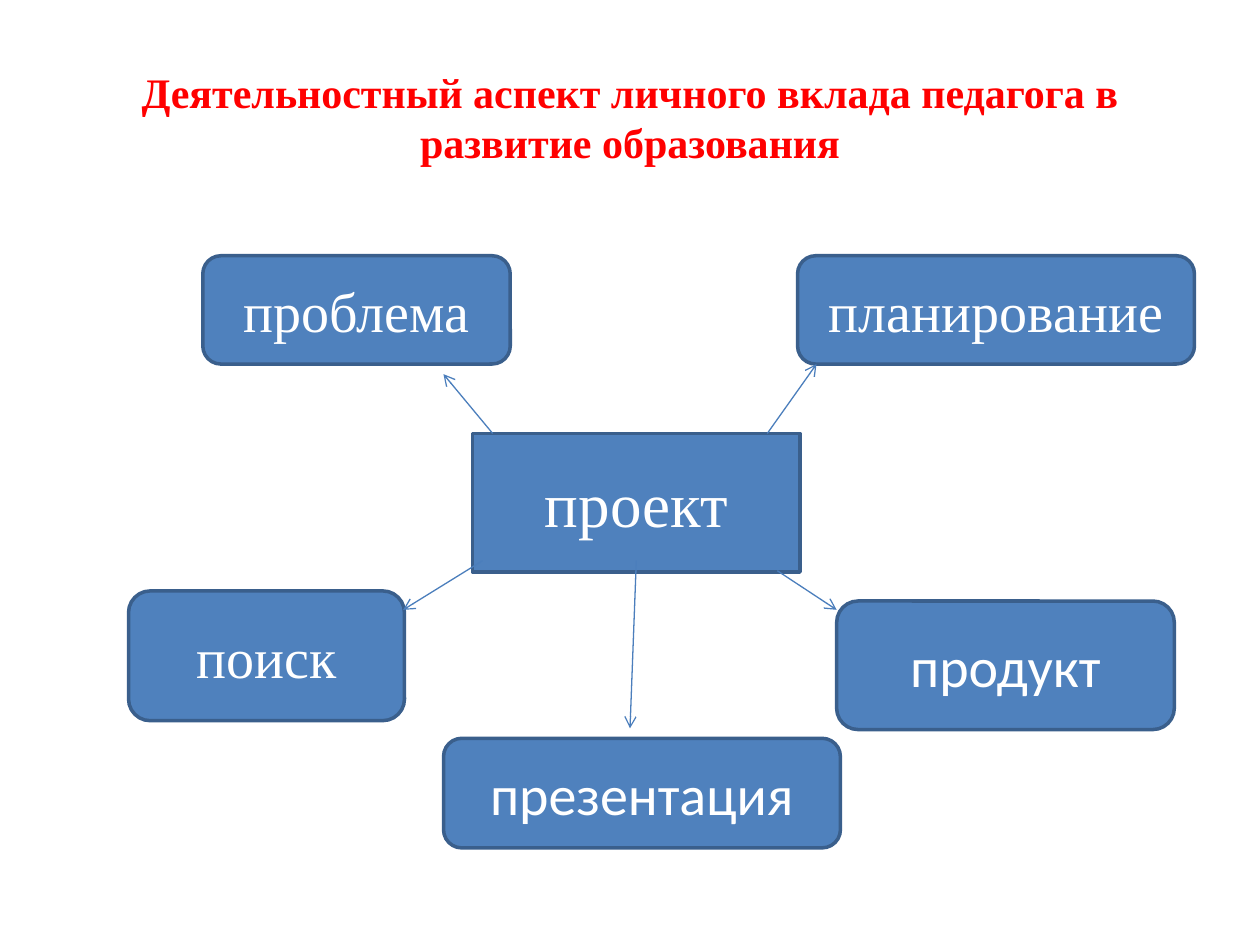
import pptx
import pptx.util
import pptx.dml.color
import pptx.enum.shapes
import pptx.enum.text
import pptx.oxml.ns
import lxml.etree

Inches = pptx.util.Inches
Pt = pptx.util.Pt
Kind = pptx.enum.shapes.MSO_SHAPE
SERIF = "Times New Roman"
SANS = "Calibri"

# Satellite nodes: text, font, box
NODES = [
    ("проблема", SERIF, (1.61, 2.03, 2.44, 0.86)),
    ("планирование", SERIF, (6.33, 2.03, 3.15, 0.86)),
    ("поиск", SERIF, (1.02, 4.69, 2.19, 1.03)),
    ("презентация", SANS, (3.52, 5.86, 3.15, 0.87)),
    ("продукт", SANS, (6.64, 4.77, 2.68, 1.02)),
]

# Arrows from the hub: start, end, relative to its top left corner
ARROWS = [
    ((0.16, 0), (-0.23, -0.47)),
    ((2.34, 0), (2.73, -0.55)),
    ((0.08, 1.01), (-0.55, 1.4)),
    ((2.42, 1.09), (2.89, 1.4)),
    ((1.3, 1.01), (1.25, 2.34)),
]


def color(code):
    return pptx.dml.color.RGBColor.from_string(code)


def style(frame, font, size, code, bold=False):
    frame.word_wrap = True
    frame.vertical_anchor = pptx.enum.text.MSO_ANCHOR.MIDDLE
    para = frame.paragraphs[0]
    para.alignment = pptx.enum.text.PP_ALIGN.CENTER
    face = para.runs[0].font
    face.name, face.size, face.bold = font, Pt(size), bold
    face.color.rgb = color(code)


def add_title(slide, box, text):
    title = slide.shapes.title
    title.left, title.top, title.width, title.height = map(Inches, box)
    title.text_frame.text = text
    style(title.text_frame, SERIF, 24, "FF0000", True)


def add_node(slide, box, text, font, size, kind):
    node = slide.shapes.add_shape(kind, *map(Inches, box))
    node.shadow.inherit = False
    node.fill.solid()
    node.fill.fore_color.rgb = color("4F81BD")
    node.line.color.rgb = color("3A5F8C")
    node.line.width = Pt(2)
    node.text_frame.text = text
    style(node.text_frame, font, size, "FFFFFF")


def add_arrow(slide, start, end):
    line = slide.shapes.add_connector(
        pptx.enum.shapes.MSO_CONNECTOR.STRAIGHT, *map(Inches, start + end))
    line.line.color.rgb = color("4B7EBC")
    line.line.width = Pt(0.75)
    qn = pptx.oxml.ns.qn
    props = line._element.spPr
    lxml.etree.SubElement(props.find(qn("a:ln")), qn("a:tailEnd"), type="arrow")
    lxml.etree.SubElement(props, qn("a:effectLst"))


def add_map(slide, box):
    # Hub, then the nodes around it
    add_node(slide, box, "проект", SERIF, 36, Kind.RECTANGLE)
    for text, font, place in NODES:
        add_node(slide, place, text, font, 32, Kind.ROUNDED_RECTANGLE)

    # Arrows to the nodes
    left, top = box[:2]
    for start, end in ARROWS:
        add_arrow(slide, (left + start[0], top + start[1]),
                  (left + end[0], top + end[1]))


def main():
    deck = pptx.Presentation()
    deck.slide_width, deck.slide_height = Inches(10), Inches(7.5)
    slide = deck.slides.add_slide(deck.slide_layouts[5])
    add_title(slide, (0.5, 0.3, 9, 1.25),
              "Деятельностный аспект личного вклада педагога в развитие образования")
    add_map(slide, (3.75, 3.44, 2.6, 1.1))
    deck.save("out.pptx")


if __name__ == "__main__":
    main()
